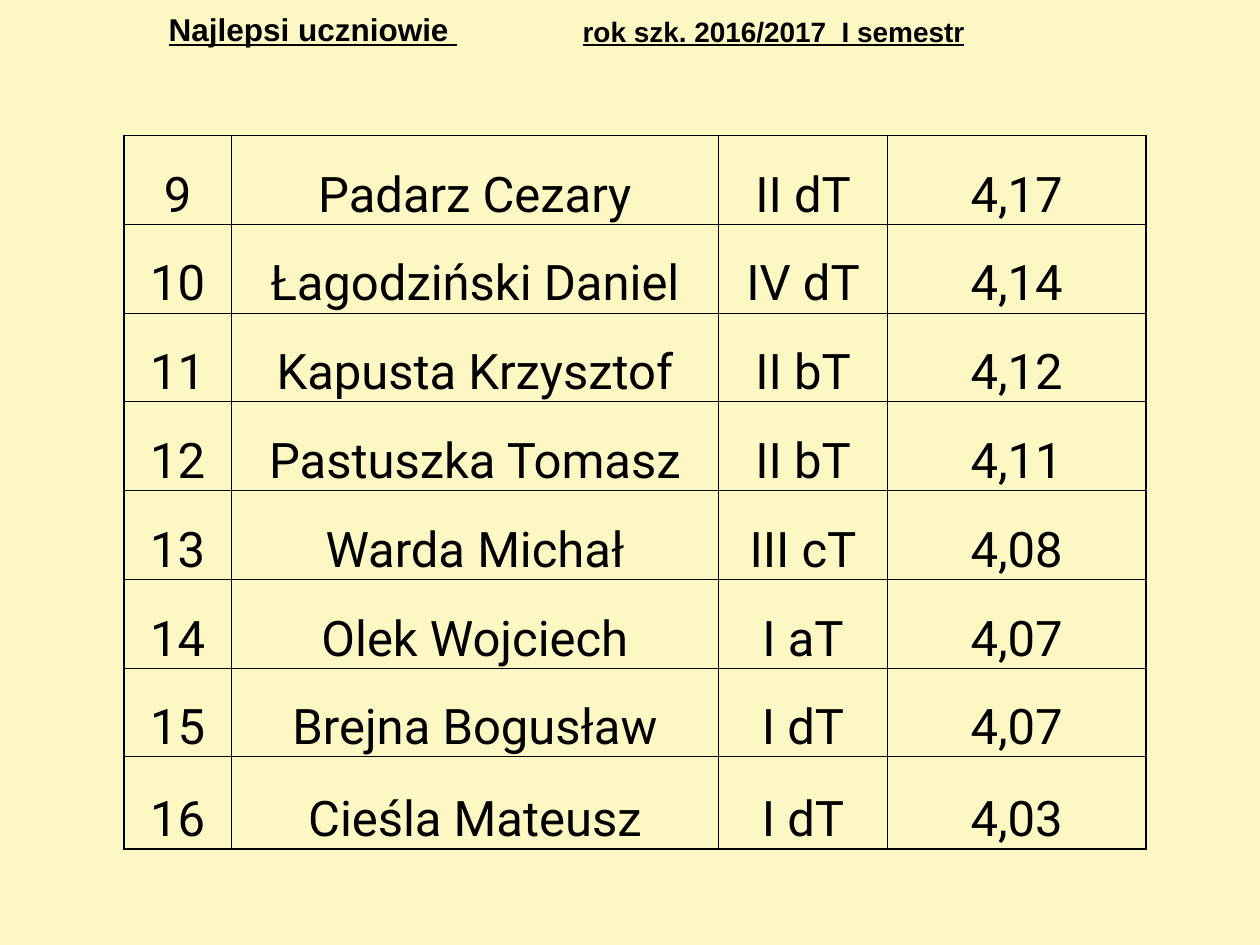
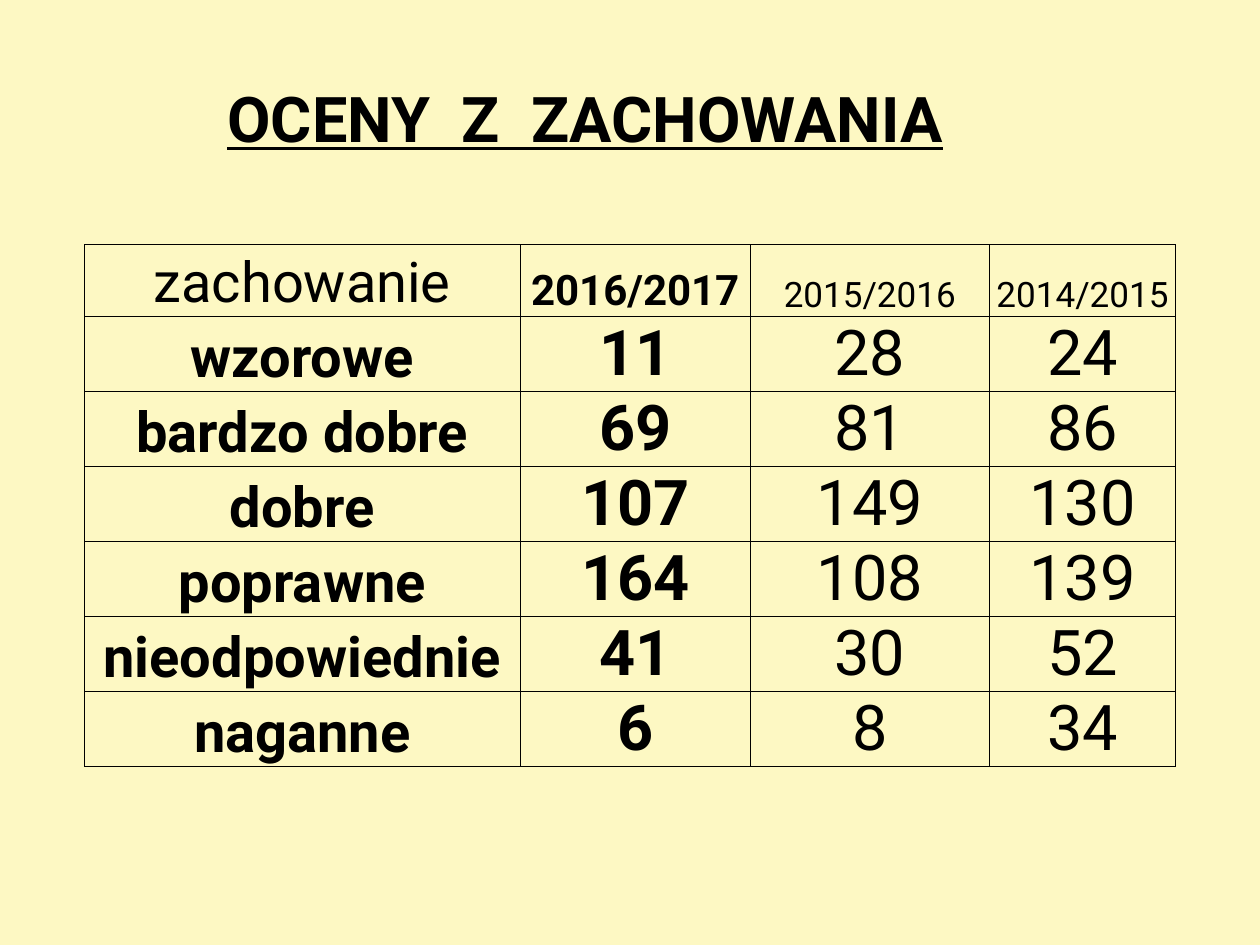
from dataclasses import dataclass

from lxml import etree
from pptx import Presentation
from pptx import util as u
from pptx.dml.color import RGBColor
from pptx.enum import text
from pptx.oxml.ns import qn


@dataclass(frozen=True)
class Theme:
    paper: str = "FDF8C3"
    ink: str = "000000"
    body_font: str = "Roboto"
    heading_font: str = "Arial"
    title: int = 36
    heading: int = 18
    subheading: int = 16
    student: int = 28
    label: int = 32
    number: int = 36
    current_year: int = 24
    past_year: int = 20
    thin: float = 0.5
    thick: float = 1


THEME = Theme()
COLS, ROWS = 100, 75
SLIDE_W, SLIDE_H = u.Inches(10), u.Inches(7.5)
TIGHT = (0.01, 0.01)
LOOSE = (0.05, 0)

HEADINGS = [("", "Najlepsi uczniowie ", "rok szk. 2016/2017  I semestr")]
STUDENTS = [
    ("9", "Padarz Cezary", "II dT", "4,17"),
    ("10", "Łagodziński Daniel", "IV dT", "4,14"),
    ("11", "Kapusta Krzysztof", "II bT", "4,12"),
    ("12", "Pastuszka Tomasz", "II bT", "4,11"),
    ("13", "Warda Michał", "III cT", "4,08"),
    ("14", "Olek Wojciech", "I aT", "4,07"),
    ("15", "Brejna Bogusław", "I dT", "4,07"),
    ("16", "Cieśla Mateusz", "I dT", "4,03"),
]
TITLE = [("OCENY  Z  ZACHOWANIA",)]
GRADES = [
    ("zachowanie", "2016/2017", "2015/2016", "2014/2015"),
    ("wzorowe", "11", "28", "24"),
    ("bardzo dobre", "69", "81", "86"),
    ("dobre", "107", "149", "130"),
    ("poprawne", "164", "108", "139"),
    ("nieodpowiednie", "41", "30", "52"),
    ("naganne", "6", "8", "34"),
]


def across(cols):
    return int(SLIDE_W * cols / COLS)


def down(rows):
    return int(SLIDE_H * rows / ROWS)


def style(p, size, bold=False, underline=False, font=THEME.body_font):
    p.alignment = text.PP_ALIGN.CENTER
    p.font.name, p.font.size = font, u.Pt(size)
    p.font.bold, p.font.underline = bold, underline
    p.font.color.rgb = RGBColor.from_string(THEME.ink)


def add_slide(prs):
    s = prs.slides.add_slide(prs.slide_layouts[6])
    s.background.fill.solid()
    s.background.fill.fore_color.rgb = RGBColor.from_string(THEME.paper)
    return s


def set_borders(cell, widths):
    tcPr = cell._tc.get_or_add_tcPr()
    for i, (side, width) in enumerate(zip("LRTB", widths)):
        ln = etree.Element(qn(f"a:ln{side}"), w=str(u.Pt(width)))
        if width:
            fill = etree.SubElement(ln, qn("a:solidFill"))
            etree.SubElement(fill, qn("a:srgbClr"), val=THEME.ink)
        else:
            etree.SubElement(ln, qn("a:noFill"))
        tcPr.insert(i, ln)


def add_grid(s, origin, widths, heights, data, cell_style, inner=0, outer=0, inset=TIGHT):
    x, y = origin
    frame = s.shapes.add_table(len(data), len(widths), across(x), down(y),
                               across(sum(widths)), down(sum(heights)))
    table = frame.table
    table.first_row = table.horz_banding = False
    for column, width in zip(table.columns, widths):
        column.width = across(width)
    for row, height in zip(table.rows, heights):
        row.height = down(height)
    for r, values in enumerate(data):
        for c, value in enumerate(values):
            cell = table.cell(r, c)
            cell.fill.background()
            cell.vertical_anchor = text.MSO_ANCHOR.BOTTOM
            cell.margin_left = cell.margin_right = u.Inches(inset[0])
            cell.margin_top, cell.margin_bottom = u.Inches(inset[1]), 0
            cell.text = value
            style(cell.text_frame.paragraphs[0], *cell_style(r, c))
            on_edge = (c == 0, c == len(widths) - 1, False, r == len(data) - 1)
            set_borders(cell, [outer if edge else inner for edge in on_edge])


def heading_style(r, c):
    size = THEME.subheading if c == 2 else THEME.heading
    return size, True, True, THEME.heading_font


def student_style(r, c):
    return THEME.student, False


def title_style(r, c):
    return THEME.title, True, True


def grade_style(r, c):
    if r == 0:
        sizes = THEME.label, THEME.current_year, THEME.past_year, THEME.past_year
        return sizes[c], c == 1
    return THEME.label if c == 0 else THEME.number, c < 2


def build_students(prs):
    s = add_slide(prs)
    add_grid(s, (6.7, 1), (5.9, 24.5, 48.6), [2.8], HEADINGS, heading_style, inset=LOOSE)
    add_grid(s, (9.84, 10.74), (8.5, 38.7, 13.4, 20.5), [7.05] * 7 + [7.3],
             STUDENTS, student_style, THEME.thin, THEME.thick)


def build_grades(prs):
    s = add_slide(prs)
    add_grid(s, (14.8, 4.7), [63.3], [7.8], TITLE, title_style)
    add_grid(s, (6.7, 19.4), (34.6, 18.24, 19, 14.76), [5.7] + [5.95] * 6,
             GRADES, grade_style, THEME.thin, THEME.thin)


def main():
    prs = Presentation()
    prs.slide_width, prs.slide_height = SLIDE_W, SLIDE_H
    build_students(prs)
    build_grades(prs)
    prs.save("out.pptx")


if __name__ == "__main__":
    main()
